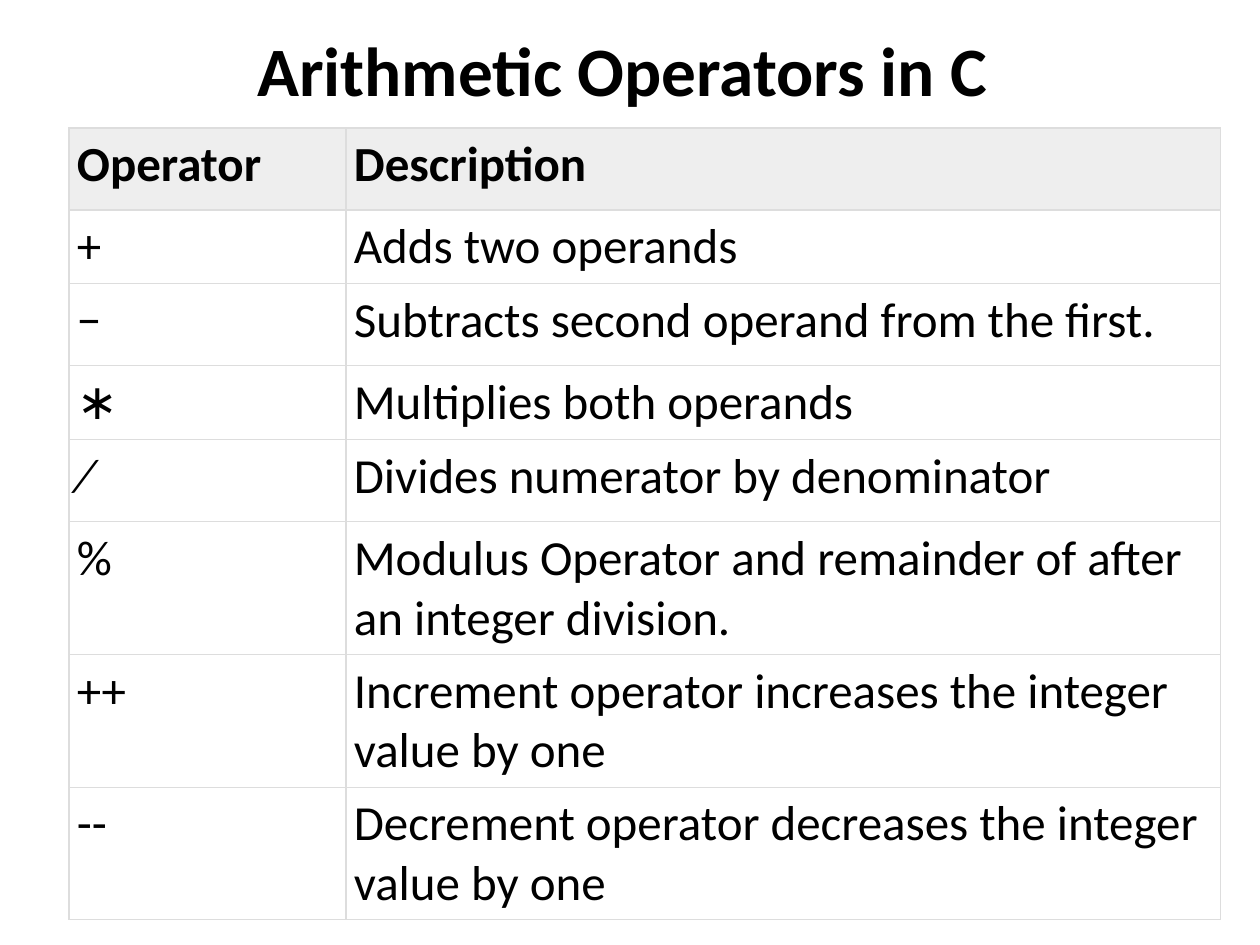
from lxml.etree import SubElement
from pptx import Presentation
from pptx.dml.color import RGBColor
from pptx.enum.text import MSO_ANCHOR, PP_ALIGN
from pptx.oxml.ns import qn
from pptx.util import Emu, Pt

PX_PER_INCH = 126
FONT = "Calibri"
BLACK = RGBColor(0x00, 0x00, 0x00)
HEADER_GREY = RGBColor(0xEE, 0xEE, 0xEE)
BORDER_GREY = RGBColor(0xDD, 0xDD, 0xDD)

COLUMN_WIDTHS = (277, 875)
ROW_HEIGHTS = (82, 62, 82, 62, 82, 113, 113, 113)
OPERATORS = (
    ("Operator", "Description"),
    ("+", "Adds two operands"),
    ("−", "Subtracts second operand from the first."),
    ("∗", "Multiplies both operands"),
    ("∕", "Divides numerator by denominator"),
    ("%", "Modulus Operator and remainder of after an integer division."),
    ("++", "Increment operator increases the integer value by one"),
    ("--", "Decrement operator decreases the integer value by one"),
)


def px(length):
    return Emu(round(length * 914400 / PX_PER_INCH))


def add_text(para, text, size, bold):
    span = para.add_run()
    span.text = text
    span.font.name = FONT
    span.font.size = Pt(size)
    span.font.bold = bold
    span.font.color.rgb = BLACK


def add_title(page, text):
    box = page.shapes.add_textbox(px(24), px(20), px(1197), px(98))
    frame = box.text_frame
    frame.word_wrap = True
    frame.vertical_anchor = MSO_ANCHOR.MIDDLE
    para = frame.paragraphs[0]
    para.alignment = PP_ALIGN.CENTER
    add_text(para, text, 39.6, True)


def add_borders(cell):
    properties = cell._tc.get_or_add_tcPr()
    for side in ("a:lnL", "a:lnR", "a:lnT", "a:lnB"):
        line = SubElement(properties, qn(side), w=str(Pt(0.75)))
        fill = SubElement(line, qn("a:solidFill"))
        SubElement(fill, qn("a:srgbClr"), val=str(BORDER_GREY))


def fill_cell(cell, text, is_header):
    cell.margin_left = cell.margin_right = cell.margin_bottom = px(8)
    cell.margin_top = px(7)
    add_borders(cell)
    if is_header:
        cell.fill.solid()
        cell.fill.fore_color.rgb = HEADER_GREY
    else:
        cell.fill.background()
    add_text(cell.text_frame.paragraphs[0], text, 28, is_header)


def add_operator_table(page):
    table = page.shapes.add_table(
        len(OPERATORS), len(COLUMN_WIDTHS), px(69), px(128),
        px(sum(COLUMN_WIDTHS)), px(sum(ROW_HEIGHTS))).table
    table.first_row = False
    table.horz_banding = False
    for column, width in zip(table.columns, COLUMN_WIDTHS):
        column.width = px(width)
    for row_index, (row, texts) in enumerate(zip(table.rows, OPERATORS)):
        row.height = px(ROW_HEIGHTS[row_index])
        for cell, text in zip(row.cells, texts):
            fill_cell(cell, text, row_index == 0)


def main():
    deck = Presentation()
    deck.slide_width, deck.slide_height = px(1260), px(945)
    page = deck.slides.add_slide(deck.slide_layouts[6])
    # Heading
    add_title(page, "Arithmetic Operators in C")
    # Operators and their meanings
    add_operator_table(page)
    deck.save("out.pptx")


if __name__ == "__main__":
    main()
